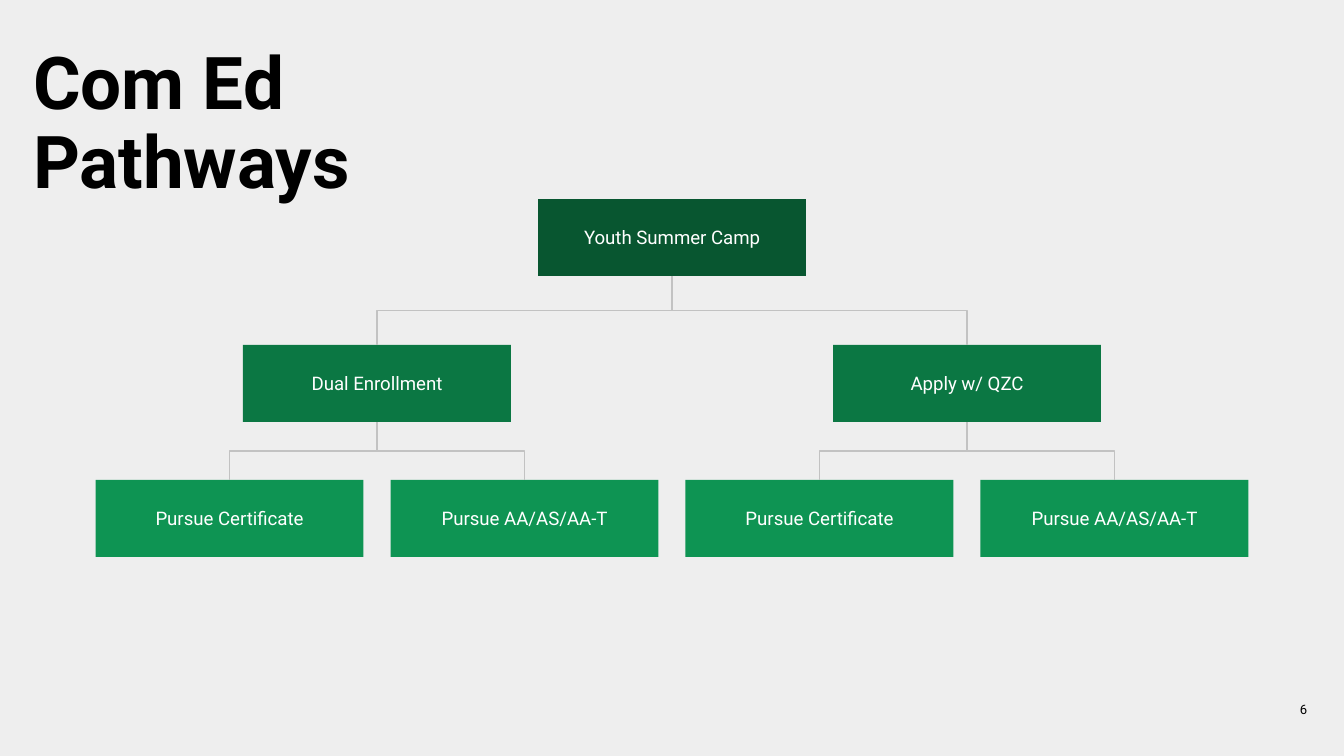
from dataclasses import dataclass

from lxml.etree import SubElement
from pptx import Presentation
from pptx.dml.color import RGBColor
from pptx.enum.shapes import MSO_CONNECTOR as Link, MSO_SHAPE as Preset
from pptx.enum.text import MSO_ANCHOR as Anchor, PP_ALIGN as Align
from pptx.oxml.ns import qn
from pptx.util import Emu, Pt

SLIDE_W, SLIDE_H = 1344, 756
BOX_W, BOX_H = 268, 77
COLUMN_PITCH = 295
LEVEL_TOPS = (199, 345, 480)
INSET = 13


@dataclass(frozen=True)
class Theme:
    """Colours, typeface and type sizes of the slide."""
    font: str = "Roboto"
    background: str = "EEEEEE"
    ink: str = "000000"
    box_ink: str = "FFFFFF"
    levels: tuple = ("085630", "0B7743", "0E9453")
    branch: str = "C2C2C2"
    title_size: float = 39
    box_size: float = 10
    number_size: float = 7
    branch_width: float = 0.75


THEME = Theme()

PATHWAYS = ("Youth Summer Camp", 0, 0, (
    ("Dual Enrollment", 1, -2, (
        ("Pursue Certificate", 2, -3, ()),
        ("Pursue AA/AS/AA-T", 2, -1, ()),
    )),
    ("Apply w/ QZC", 1, 2, (
        ("Pursue Certificate", 2, 1, ()),
        ("Pursue AA/AS/AA-T", 2, 3, ()),
    )),
))


def px(length):
    """Turn pixels into EMU."""
    return Emu(round(length * 9144000 / SLIDE_W))


def rgb(code):
    """Turn a hex code into a colour."""
    return RGBColor.from_string(code)


def write(holder, text, size, color, align, anchor, bold=False):
    """Put one styled paragraph into a shape and return the paragraph."""
    frame = holder.text_frame
    frame.word_wrap = True
    frame.vertical_anchor = anchor
    frame.margin_left = frame.margin_right = px(INSET)
    frame.margin_top = frame.margin_bottom = px(INSET)
    frame.text = text
    line = frame.paragraphs[0]
    line.alignment = align
    font = line.runs[0].font
    font.name, font.size, font.bold = THEME.font, Pt(size), bold
    font.color.rgb = rgb(color)
    return line


def add_title(slide, text):
    """Add the slide heading."""
    heading = slide.shapes.add_textbox(px(20), px(34), px(562), px(106))
    line = write(heading, text, THEME.title_size, THEME.ink,
                 Align.LEFT, Anchor.TOP, bold=True)
    line.line_spacing = 0.9


def add_page_number(slide, number):
    """Add the page number in the lower right corner."""
    corner = slide.shapes.add_textbox(px(1239), px(680), px(81), px(58))
    write(corner, number, THEME.number_size, THEME.ink,
          Align.RIGHT, Anchor.MIDDLE)


def add_box(slide, label, level, center):
    """Add one step of the pathway tree."""
    box = slide.shapes.add_shape(
        Preset.RECTANGLE, px(center - BOX_W / 2), px(LEVEL_TOPS[level]),
        px(BOX_W), px(BOX_H))
    box.shadow.inherit = False
    box.fill.solid()
    box.fill.fore_color.rgb = rgb(THEME.levels[level])
    box.line.fill.background()
    write(box, label, THEME.box_size, THEME.box_ink,
          Align.CENTER, Anchor.MIDDLE)


def add_branch(slide, parent_foot, child_head):
    """Add an elbow that leaves and arrives vertically, by a quarter turn."""
    (x1, y1), (x2, y2) = sorted((parent_foot, child_head))
    mid_x, mid_y = (x1 + x2) / 2, (y1 + y2) / 2
    half_w, half_h = (x2 - x1) / 2, (y2 - y1) / 2
    branch = slide.shapes.add_connector(
        Link.ELBOW, px(mid_x + half_h), px(mid_y - half_w),
        px(mid_x - half_h), px(mid_y + half_w))
    branch.line.color.rgb = rgb(THEME.branch)
    branch.line.width = Pt(THEME.branch_width)
    properties = branch._element.spPr
    properties.find(qn("a:xfrm")).set("rot", "16200000")
    SubElement(properties, qn("a:effectLst"))


def add_tree(slide, step):
    """Add a step, its children and the branches between them."""
    label, level, half_columns, children = step
    center = SLIDE_W / 2 + half_columns * COLUMN_PITCH / 2
    add_box(slide, label, level, center)
    for child in children:
        child_head = add_tree(slide, child)
        add_branch(slide, (center, LEVEL_TOPS[level] + BOX_H), child_head)
    return center, LEVEL_TOPS[level]


def main():
    """Build the slide and save it."""
    deck = Presentation()
    deck.slide_width, deck.slide_height = px(SLIDE_W), px(SLIDE_H)
    slide = deck.slides.add_slide(deck.slide_layouts[6])
    slide.background.fill.solid()
    slide.background.fill.fore_color.rgb = rgb(THEME.background)
    add_page_number(slide, "6")
    add_title(slide, "Com Ed Pathways")
    add_tree(slide, PATHWAYS)
    deck.save("out.pptx")


if __name__ == "__main__":
    main()
